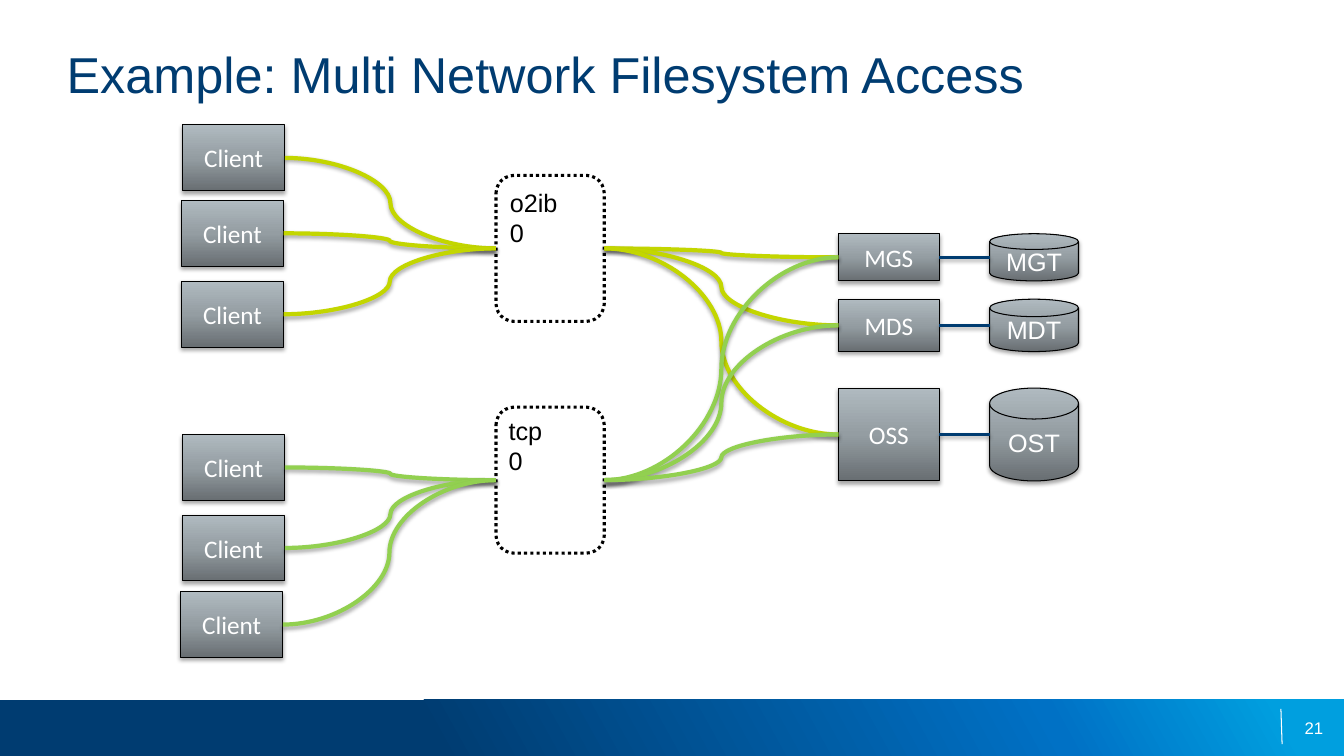
from copy import deepcopy
from typing import NamedTuple

from lxml.etree import SubElement
from pptx import Presentation
from pptx.dml.color import RGBColor
from pptx.enum.dml import MSO_LINE
from pptx.enum.shapes import MSO_CONNECTOR, MSO_SHAPE
from pptx.enum.text import MSO_ANCHOR, PP_ALIGN
from pptx.oxml.ns import qn
from pptx.util import Cm, Pt

NAVY, WHITE, BLACK = "003C71", "FFFFFF", "000000"
STEEL = [(0, "686E72"), (0.5, "949DA2"), (1, "B0BAC0")]
OCEAN = [(0.32, NAVY), (0.78, "0071C5"), (0.95, "009FDF")]


class Box(NamedTuple):
    """A region in centimetres."""
    left: float
    top: float
    width: float
    height: float

    def inner(self, left, top, width, height):
        """Return a box placed relative to this one."""
        return Box(self.left + left, self.top + top, width, height)

    def lengths(self):
        """Return the box as lengths."""
        return [Cm(value) for value in self]

    def side(self, share):
        """Return the point at a share of the width, halfway down."""
        return self.left + self.width * share, self.top + self.height / 2


def colour(value):
    """Turn a hex string into a colour."""
    return RGBColor.from_string(value)


def apply(target, values):
    """Set each named attribute on the target."""
    for name, value in values.items():
        setattr(target, name, value)


def write(shape, text, size, shade, face="Arial", align=PP_ALIGN.LEFT, **frame):
    """Put one formatted paragraph into a shape."""
    apply(shape.text_frame, {"word_wrap": True, **frame})
    para = shape.text_frame.paragraphs[0]
    para.alignment = align
    span = para.add_run()
    span.text = text
    apply(span.font, {"name": face, "size": Pt(size)})
    span.font.color.rgb = colour(shade)


def outline(shape, shade, width):
    """Colour the line of a shape or connector."""
    shape.line.color.rgb = colour(shade)
    shape.line.width = Pt(width)


def cast_shadow(shape):
    """Add a soft shadow that falls straight down."""
    properties = shape._element.spPr
    effects = properties.find(qn("a:effectLst"))
    if effects is None:
        effects = SubElement(properties, qn("a:effectLst"))
    shadow = SubElement(effects, qn("a:outerShdw"), blurRad=str(Pt(3.1)),
                        dist=str(Pt(1.8)), dir="5400000", rotWithShape="0")
    shade = SubElement(shadow, qn("a:srgbClr"), val=BLACK)
    SubElement(shade, qn("a:alpha"), val="35000")


def blend(shape, stops, angle):
    """Fill a shape with a three-stop gradient."""
    shape.fill.gradient()
    shape.fill.gradient_angle = angle
    stop_list = shape._element.spPr.find(".//" + qn("a:gsLst"))
    stop_list.append(deepcopy(stop_list[0]))
    for stop, (position, shade) in zip(shape.fill.gradient_stops, stops):
        stop.position = position
        stop.color.rgb = colour(shade)


def add_node(page, box, text, kind=MSO_SHAPE.RECTANGLE, face="Calibri"):
    """Draw one labelled steel machine or disk."""
    node = page.shapes.add_shape(kind, *box.lengths())
    node.shadow.inherit = False
    blend(node, STEEL, 90)
    outline(node, BLACK, 0.75)
    cast_shadow(node)
    write(node, text, 18, WHITE, face, PP_ALIGN.CENTER,
          vertical_anchor=MSO_ANCHOR.MIDDLE)


def add_link(page, start, end, shade, width, kind=MSO_CONNECTOR.CURVE):
    """Join two points with a shadowed line."""
    link = page.shapes.add_connector(kind, *[Cm(value) for value in start + end])
    outline(link, shade, width)
    cast_shadow(link)


def add_title(page, box, text):
    """Move and format the title placeholder."""
    title = page.shapes.title
    apply(title, dict(zip(("left", "top", "width", "height"), box.lengths())))
    write(title, text, 36, NAVY, vertical_anchor=MSO_ANCHOR.MIDDLE,
          margin_left=0, margin_right=0, margin_top=0, margin_bottom=0)


def add_footer(page, box, number):
    """Draw the gradient band with its rule and page number."""
    band = page.shapes.add_shape(MSO_SHAPE.RECTANGLE, *box.lengths())
    band.shadow.inherit = False
    blend(band, OCEAN, 29)
    band.line.fill.background()
    rule = box.inner(32.28, 0.23, 0.03, 0.89)
    line = page.shapes.add_connector(
        MSO_CONNECTOR.STRAIGHT, Cm(rule.left), Cm(rule.top),
        Cm(rule.left + rule.width), Cm(rule.top + rule.height))
    outline(line, WHITE, 0.75)
    SubElement(line._element.spPr, qn("a:effectLst"))
    label = page.shapes.add_textbox(*box.inner(32.08, 0.45, 1.27, 0.51).lengths())
    write(label, number, 12, WHITE, align=PP_ALIGN.RIGHT,
          margin_left=0, margin_right=0, margin_top=0, margin_bottom=0)


def add_clients(page, box, offsets):
    """Draw a column of clients and return their right-hand points."""
    places = [box.inner(left, top, 2.58, 1.66) for left, top in offsets]
    for place in places:
        add_node(page, place, "Client")
    return [place.side(1) for place in places]


def add_network(page, box, name, label_offset):
    """Draw a dotted network with its name."""
    cloud = page.shapes.add_shape(MSO_SHAPE.ROUNDED_RECTANGLE, *box.lengths())
    cloud.shadow.inherit = False
    cloud.fill.solid()
    cloud.fill.fore_color.rgb = colour(WHITE)
    outline(cloud, BLACK, 2.25)
    cloud.line.dash_style = MSO_LINE.ROUND_DOT
    label = page.shapes.add_textbox(*box.inner(*label_offset).lengths())
    write(label, name, 18, BLACK)


def add_servers(page, box, rows):
    """Draw servers joined to their disks and return the left-hand points."""
    entries = []
    for server_name, disk_name, top, height in rows:
        server = box.inner(0, top, 2.54, height)
        disk = box.inner(3.81, top, 2.24, height)
        add_node(page, server, server_name)
        add_node(page, disk, disk_name, MSO_SHAPE.FLOWCHART_MAGNETIC_DISK, "Arial")
        add_link(page, server.side(1), disk.side(0), NAVY, 2, MSO_CONNECTOR.STRAIGHT)
        entries.append(server.side(0))
    return entries


def add_diagram(page, box):
    """Draw two client groups that reach every server over their own network."""
    servers = add_servers(page, box.inner(16.58, 2.74, 6.05, 6.23), [
        ("MGS", "MGT", 0, 1.19), ("MDS", "MDT", 1.65, 1.32), ("OSS", "OST", 3.89, 2.34)])
    groups = [
        ("o2ib0", "C3D600", 0, [(0.05, 0), (0.02, 1.9), (0.02, 3.94)],
         1.27, (0.1, 0.18, 1.98, 1.02)),
        ("tcp0", "92D050", 7.8, [(0.05, 0), (0.05, 2.03), (0, 3.96)],
         7.11, (0.07, 0.08, 1.65, 1.02))]
    for name, shade, client_top, offsets, network_top, label_offset in groups:
        network = box.inner(7.95, network_top, 2.73, 3.68)
        clients = add_clients(page, box.inner(0, client_top, 2.63, 5.62), offsets)
        add_network(page, network, name, label_offset)
        for client in clients:
            add_link(page, client, network.side(0), shade, 3)
        for server in servers:
            add_link(page, network.side(1), server, shade, 3)


def main():
    """Build and save the slide."""
    deck = Presentation()
    apply(deck, {"slide_width": Cm(33.87), "slide_height": Cm(19.05)})
    page = deck.slides.add_slide(deck.slide_layouts[5])
    add_footer(page, Box(0, 17.63, 33.87, 1.42), "21")
    add_title(page, Box(1.68, 0.99, 30.48, 1.7),
              "Example: Multi Network Filesystem Access")
    add_diagram(page, Box(4.55, 3.15, 22.63, 13.42))
    deck.save("out.pptx")


if __name__ == "__main__":
    main()
